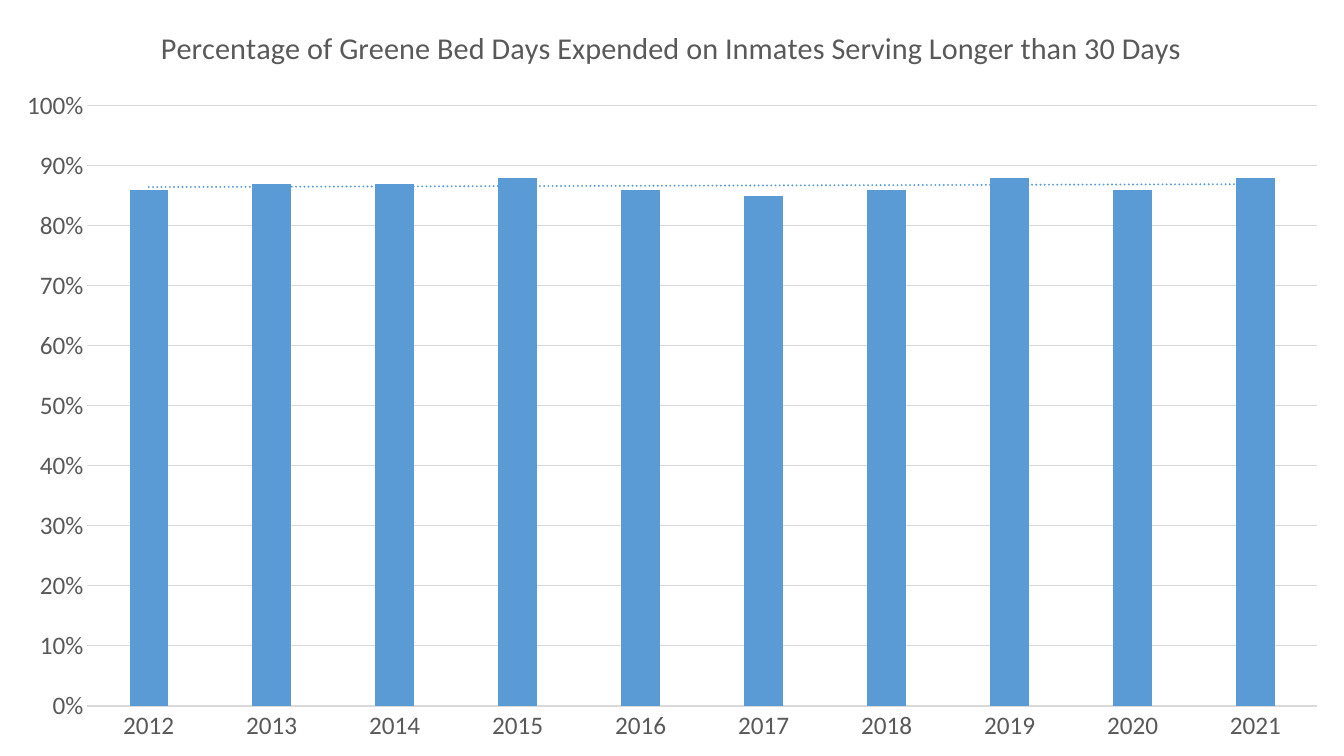
import pptx
import pptx.chart.data
import pptx.dml.color
import pptx.enum.chart
import pptx.oxml
import pptx.oxml.ns
import pptx.util

FONT = "Calibri"
BLUE = "5B9BD5"
TEXT_GRAY = "595959"
LINE_GRAY = "D9D9D9"
NAMESPACES = pptx.oxml.ns.nsdecls("c", "a")


def color(hex_string):
    return pptx.dml.color.RGBColor.from_string(hex_string)


def format_font(font, size):
    font.color.rgb = color(TEXT_GRAY)
    for name, value in {"name": FONT, "size": pptx.util.Pt(size), "bold": False}.items():
        setattr(font, name, value)


presentation = pptx.Presentation()
presentation.slide_width = pptx.util.Cm(33.87)
presentation.slide_height = pptx.util.Cm(19.05)
slide = presentation.slides.add_slide(presentation.slide_layouts[6])

# Data and chart
chart_data = pptx.chart.data.CategoryChartData(number_format="0%")
chart_data.categories = [str(year) for year in range(2012, 2022)]
chart_data.add_series(
    "Series 1", [0.86, 0.87, 0.87, 0.88, 0.86, 0.85, 0.86, 0.88, 0.86, 0.88]
)
chart = slide.shapes.add_chart(
    pptx.enum.chart.XL_CHART_TYPE.COLUMN_CLUSTERED,
    pptx.util.Cm(0), pptx.util.Cm(0),
    presentation.slide_width, presentation.slide_height,
    chart_data,
).chart
chart.has_legend = False
format_font(chart.font, 18)

# Title
title_paragraph = chart.chart_title.text_frame.paragraphs[0]
title_run = title_paragraph.add_run()
title_run.text = "Percentage of Greene Bed Days Expended on Inmates Serving Longer than 30 Days"
format_font(title_run.font, 21.6)
chart.chart_title.include_in_layout = False

# Axes
for axis in (chart.category_axis, chart.value_axis):
    axis.major_tick_mark = pptx.enum.chart.XL_TICK_MARK.NONE
    axis.minor_tick_mark = pptx.enum.chart.XL_TICK_MARK.NONE
    format_font(axis.tick_labels.font, 18)

value_axis = chart.value_axis
axis_scale = {"minimum_scale": 0, "maximum_scale": 1, "major_unit": 0.1}
for name, value in axis_scale.items():
    setattr(value_axis, name, value)
value_axis.tick_labels.number_format = "0%"
value_axis.tick_labels.number_format_is_linked = False
value_axis.format.line.fill.background()
value_axis.has_major_gridlines = True
for line in (chart.category_axis.format.line, value_axis.major_gridlines.format.line):
    line.color.rgb = color(LINE_GRAY)
    line.width = pptx.util.Pt(0.75)

# Columns
plot = chart.plots[0]
for name, value in {"gap_width": 219, "overlap": -27, "vary_by_categories": False}.items():
    setattr(plot, name, value)
series = plot.series[0]
series.format.fill.solid()
series.format.fill.fore_color.rgb = color(BLUE)

# Linear trend line, which must precede the categories in the series
trend_line = pptx.oxml.parse_xml(
    f'<c:trendline {NAMESPACES}><c:spPr>'
    f'<a:ln w="{pptx.util.Pt(1.5)}" cap="rnd">'
    f'<a:solidFill><a:srgbClr val="{BLUE}"/></a:solidFill>'
    '<a:prstDash val="sysDot"/></a:ln></c:spPr>'
    '<c:trendlineType val="linear"/><c:dispRSqr val="0"/><c:dispEq val="0"/>'
    '</c:trendline>'
)
series_element = series._element
series_element.find(pptx.oxml.ns.qn("c:cat")).addprevious(trend_line)

# Plot area as fractions of the chart
plot_area = chart._chartSpace.chart.plotArea
for old_layout in plot_area.findall(pptx.oxml.ns.qn("c:layout")):
    plot_area.remove(old_layout)
fractions = {"x": 0.065, "y": 0.14, "w": 0.915, "h": 0.794}
modes = "".join(f'<c:{side}Mode val="edge"/>' for side in "xy")
sizes = "".join(f'<c:{side} val="{value}"/>' for side, value in fractions.items())
plot_area.insert(0, pptx.oxml.parse_xml(
    f'<c:layout {NAMESPACES}><c:manualLayout><c:layoutTarget val="inner"/>'
    f'{modes}{sizes}</c:manualLayout></c:layout>'
))

presentation.save("out.pptx")
